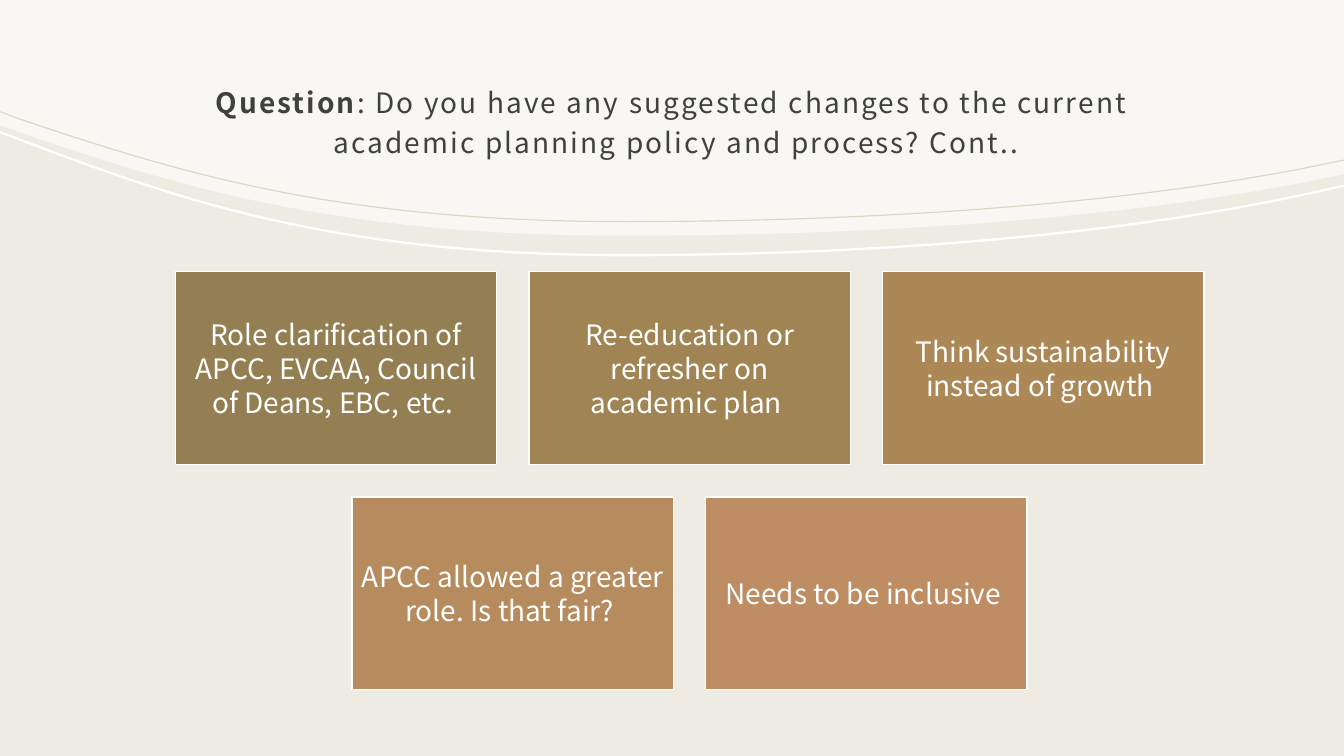
"""Builds the slide of suggested changes to the academic planning policy."""
from pptx import Presentation
from pptx.dml.color import RGBColor
from pptx.enum import shapes, text
from pptx.oxml import parse_xml
from pptx.oxml.ns import nsdecls, qn
from pptx.util import Cm, Pt

FONT = "Noto Sans CJK JP"
NBSP = chr(160)
WHITE = RGBColor(0xFF, 0xFF, 0xFF)
SAND = RGBColor(0xEE, 0xEB, 0xE2)
TAN = RGBColor(0xDD, 0xD7, 0xC5)
CHARCOAL = RGBColor(0x40, 0x40, 0x40)

SLIDE_WIDTH, SLIDE_HEIGHT = 33.87, 19.05
CARD_WIDTH, CARD_HEIGHT, CARD_GAP = 8.1, 4.86, 0.81
CARDS_CENTRE, CARDS_TOP = 17.38, 6.85

SWEEP_X = (0, 0.48, 4.55, 8.46, 15.75, 22.23, 28.17, 32.74, SLIDE_WIDTH)
PANEL_Y = (3.15, 3.33, 4.72, 5.94, 5.94, 5.94, 5.49, 4.62, 4.39)
WHITE_LINE_Y = (3.3, 3.48, 5.03, 6.4, 6.4, 6.4, 5.87, 4.9, 4.65)
TAN_LINE_Y = (2.8, 2.98, 4.35, 5.57, 5.57, 5.57, 5.12, 4.25, 4.02)
CURVE_STARTS = (2, 5)

CARD_ROWS = (
    (
        ("Role clarification of APCC, EVCAA, Council of Deans, "
         f"EBC,{NBSP}etc.{NBSP}", RGBColor(0x94, 0x7F, 0x53)),
        (f"Re-education or refresher on academic{NBSP}plan{NBSP}",
         RGBColor(0xA1, 0x84, 0x54)),
        (f"Think sustainability instead of{NBSP}growth{NBSP}",
         RGBColor(0xAD, 0x88, 0x57)),
    ),
    (
        (f"APCC allowed a greater role. Is that fair?{NBSP}",
         RGBColor(0xB6, 0x8B, 0x5D)),
        (f"Needs to be{NBSP}inclusive{NBSP}", RGBColor(0xBE, 0x8D, 0x64)),
    ),
)


def sweep(heights, drop=0):
    """Return the knots and handles of an edge running across the slide."""
    return [(x, y + drop) for x, y in zip(SWEEP_X, heights)]


def bend(band, starts):
    """Turn three segments from each start into one cubic curve."""
    segments = list(band.element.spPr.iter(qn("a:lnTo")))
    for start in starts:
        first, *rest = segments[start - 1:start + 2]
        curve = parse_xml(f'<a:cubicBezTo {nsdecls("a")}/>')
        first.addprevious(curve)
        for segment in (first, *rest):
            curve.append(segment[0])
            segment.getparent().remove(segment)


def add_band(slide, edge, back_edge, curve_starts, colour):
    """Fill the area enclosed by an edge and the edge leading back."""
    outline = [(Cm(x), Cm(y)) for x, y in edge + back_edge]
    builder = slide.shapes.build_freeform(*outline[0])
    builder.add_line_segments(outline[1:], close=True)
    band = builder.convert_to_shape()
    bend(band, curve_starts)
    band.shadow.inherit = False
    band.fill.solid()
    band.fill.fore_color.rgb = colour
    band.line.fill.background()
    return band


def add_panel(slide):
    """Draw the translucent panel behind the title."""
    panel = add_band(slide, sweep(PANEL_Y), [(SLIDE_WIDTH, 0), (0, 0)],
                     CURVE_STARTS, WHITE)
    colour = next(panel.element.spPr.iter(qn("a:srgbClr")))
    colour.append(parse_xml(f'<a:alpha {nsdecls("a")} val="60000"/>'))


def add_ribbon(slide, heights, thickness, colour):
    """Draw a thin curved ribbon of even thickness."""
    back_starts = tuple(start + len(SWEEP_X) for start in CURVE_STARTS)
    add_band(slide, sweep(heights), sweep(heights, thickness)[::-1],
             CURVE_STARTS + back_starts, colour)


def set_frame(frame, inset, bottom):
    """Wrap, centre vertically and inset a text frame."""
    frame.word_wrap = True
    frame.auto_size = text.MSO_AUTO_SIZE.NONE
    frame.vertical_anchor = text.MSO_ANCHOR.MIDDLE
    frame.margin_left = frame.margin_right = frame.margin_top = Cm(inset)
    frame.margin_bottom = Cm(bottom)


def format_runs(paragraph, colour):
    """Centre a paragraph and set the font of its runs."""
    paragraph.alignment = text.PP_ALIGN.CENTER
    for run in paragraph.runs:
        run.font.name = FONT
        run.font.size = Pt(20)
        run.font.bold = False
        run.font.color.rgb = colour


def fill_title(slide):
    """Place the question in the title placeholder, above the panel."""
    title = slide.shapes.title
    title.element.getparent().append(title.element)
    title.left, title.top = Cm(3.39), Cm(1.52)
    title.width, title.height = Cm(27.1), Cm(2.9)
    set_frame(title.text_frame, 0.3, 0.25)
    question = title.text_frame.paragraphs[0]
    question.text = "Question"
    question.add_run().text = (
        ": Do you have any suggested changes to the current")
    question.add_line_break()
    question.add_run().text = " academic planning policy and process? Cont.."
    question.line_spacing = 1.2
    format_runs(question, CHARCOAL)
    question.runs[0].font.bold = True
    for properties in title.element.iter(qn("a:rPr")):
        properties.set("spc", "150")


def add_card(slide, left, top, suggestion, colour):
    """Draw one suggestion as a filled card."""
    card = slide.shapes.add_shape(
        shapes.MSO_SHAPE.RECTANGLE,
        Cm(left), Cm(top), Cm(CARD_WIDTH), Cm(CARD_HEIGHT))
    card.shadow.inherit = False
    card.fill.solid()
    card.fill.fore_color.rgb = colour
    card.line.color.rgb = WHITE
    card.line.width = Pt(1)
    set_frame(card.text_frame, 0.2, 0.2)
    card.text_frame.text = suggestion
    format_runs(card.text_frame.paragraphs[0], WHITE)


def add_cards(slide):
    """Lay out the suggestions in centred rows."""
    for row, cards in enumerate(CARD_ROWS):
        row_width = len(cards) * (CARD_WIDTH + CARD_GAP) - CARD_GAP
        row_left = CARDS_CENTRE - row_width / 2
        top = CARDS_TOP + row * (CARD_HEIGHT + CARD_GAP)
        for column, (suggestion, colour) in enumerate(cards):
            left = row_left + column * (CARD_WIDTH + CARD_GAP)
            add_card(slide, left, top, suggestion, colour)


def main():
    """Build and save the slide."""
    deck = Presentation()
    deck.slide_width, deck.slide_height = Cm(SLIDE_WIDTH), Cm(SLIDE_HEIGHT)
    slide = deck.slides.add_slide(deck.slide_layouts.get_by_name("Title Only"))
    slide.background.fill.solid()
    slide.background.fill.fore_color.rgb = SAND
    add_panel(slide)
    add_ribbon(slide, WHITE_LINE_Y, 0.06, WHITE)
    fill_title(slide)
    add_ribbon(slide, TAN_LINE_Y, 0.03, TAN)
    add_cards(slide)
    deck.save("out.pptx")


if __name__ == "__main__":
    main()
